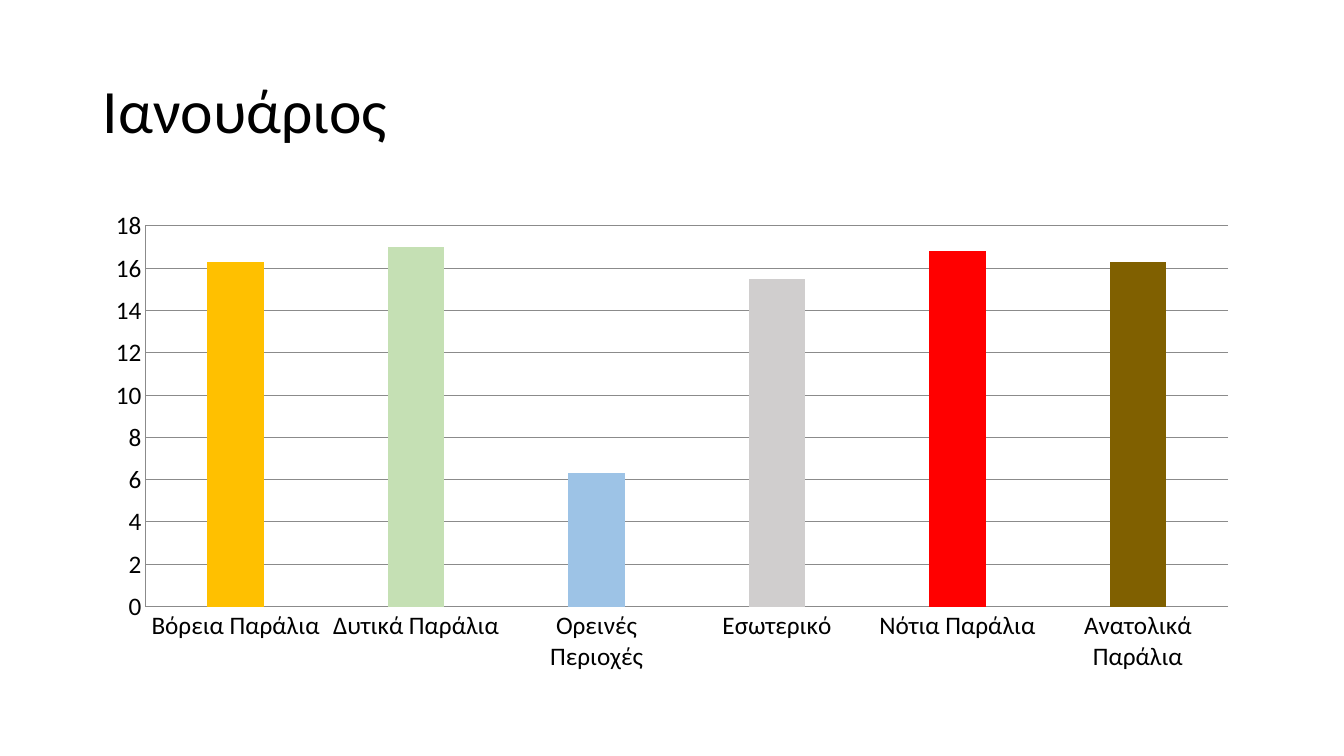
from dataclasses import dataclass

from pptx import Presentation
from pptx.chart.data import CategoryChartData
from pptx.dml.color import RGBColor
from pptx.enum.chart import XL_CHART_TYPE, XL_TICK_MARK
from pptx.enum.text import MSO_ANCHOR
from pptx.slide import Slide
from pptx.util import Inches, Pt

SLIDE_WIDTH = Inches(13.333)
SLIDE_HEIGHT = Inches(7.5)


@dataclass(frozen=True)
class Theme:
    font: str = "Calibri"
    title_size: float = 44
    chart_size: float = 18
    text: str = "000000"
    grid: str = "8B8B8B"
    grid_width: float = 0.75


@dataclass(frozen=True)
class Area:
    left: float
    top: float
    width: float
    height: float

    def place(self) -> tuple[int, int, int, int]:
        return (
            int(self.left * SLIDE_WIDTH),
            int(self.top * SLIDE_HEIGHT),
            int(self.width * SLIDE_WIDTH),
            int(self.height * SLIDE_HEIGHT),
        )


@dataclass(frozen=True)
class Region:
    name: str
    value: float
    color: str


THEME = Theme()
MARGIN = 0.069
CONTENT_WIDTH = 1 - 2 * MARGIN
TITLE_AREA = Area(MARGIN, 0.053, CONTENT_WIDTH, 0.193)
CHART_AREA = Area(MARGIN, 0.266, CONTENT_WIDTH, 0.635)
REGIONS = [
    Region("Βόρεια Παράλια", 16.3, "FFC000"),
    Region("Δυτικά Παράλια", 17, "C5E0B4"),
    Region("Ορεινές Περιοχές", 6.3, "9DC3E6"),
    Region("Εσωτερικό", 15.5, "D0CECE"),
    Region("Νότια Παράλια", 16.8, "FF0000"),
    Region("Ανατολικά Παράλια", 16.3, "806000"),
]


def add_title(slide: Slide, text: str) -> None:
    frame = slide.shapes.add_textbox(*TITLE_AREA.place()).text_frame
    frame.word_wrap = True
    frame.vertical_anchor = MSO_ANCHOR.MIDDLE
    paragraph = frame.paragraphs[0]
    paragraph.text = text
    paragraph.line_spacing = 0.9
    paragraph.font.name = THEME.font
    paragraph.font.size = Pt(THEME.title_size)
    paragraph.font.color.rgb = RGBColor.from_string(THEME.text)


def add_region_chart(slide: Slide, regions: list[Region]) -> None:
    data = CategoryChartData()
    data.categories = [region.name for region in regions]
    data.add_series("Series 1", [region.value for region in regions])
    chart = slide.shapes.add_chart(
        XL_CHART_TYPE.COLUMN_CLUSTERED, *CHART_AREA.place(), data
    ).chart
    chart.has_title = False
    chart.has_legend = False
    chart.font.name = THEME.font
    chart.font.size = Pt(THEME.chart_size)
    chart.font.color.rgb = RGBColor.from_string(THEME.text)

    plot = chart.plots[0]
    plot.vary_by_categories = False
    plot.gap_width = 219
    plot.overlap = -27
    for index, region in enumerate(regions):
        fill = plot.series[0].points[index].format.fill
        fill.solid()
        fill.fore_color.rgb = RGBColor.from_string(region.color)

    value_axis = chart.value_axis
    value_axis.minimum_scale = 0
    value_axis.maximum_scale = 18
    value_axis.major_unit = 2
    value_axis.has_major_gridlines = True
    for axis in (chart.category_axis, value_axis):
        axis.major_tick_mark = XL_TICK_MARK.NONE
        axis.minor_tick_mark = XL_TICK_MARK.NONE
    for element in (chart.category_axis, value_axis, value_axis.major_gridlines):
        element.format.line.color.rgb = RGBColor.from_string(THEME.grid)
        element.format.line.width = Pt(THEME.grid_width)


def main() -> None:
    presentation = Presentation()
    presentation.slide_width = SLIDE_WIDTH
    presentation.slide_height = SLIDE_HEIGHT
    slide = presentation.slides.add_slide(presentation.slide_layouts[6])
    add_title(slide, "Ιανουάριος")
    add_region_chart(slide, REGIONS)
    presentation.save("out.pptx")


if __name__ == "__main__":
    main()
